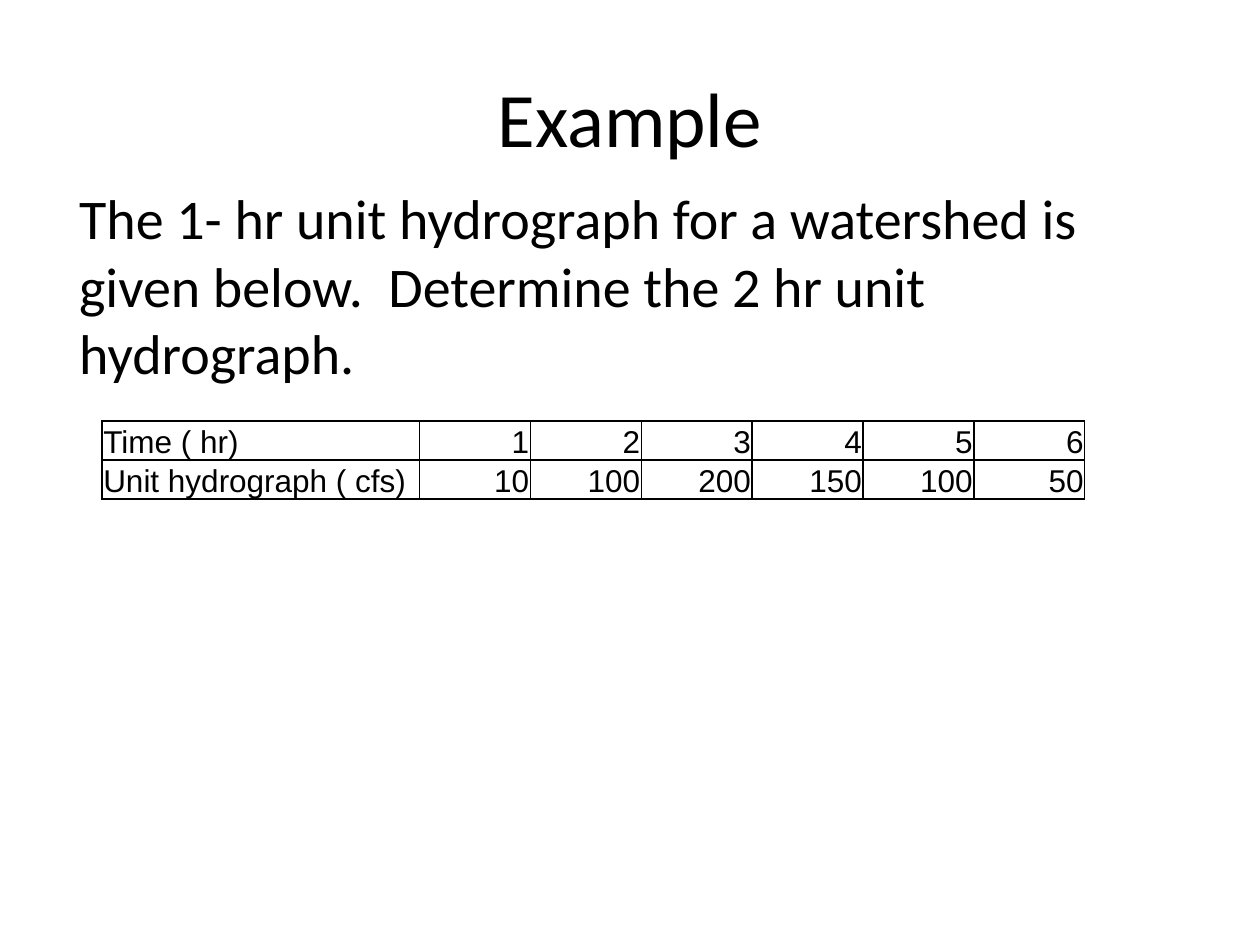
"""Build a slide that poses a unit hydrograph exercise with its data table."""
from dataclasses import dataclass

from lxml import etree
from pptx import Presentation
from pptx.dml.color import RGBColor
from pptx.enum.text import MSO_ANCHOR, PP_ALIGN
from pptx.oxml.ns import qn
from pptx.slide import Slide
from pptx.table import _Cell
from pptx.util import Inches, Pt

BLACK = RGBColor(0, 0, 0)
LEFT, CENTER, RIGHT = PP_ALIGN.LEFT, PP_ALIGN.CENTER, PP_ALIGN.RIGHT
TOP, MIDDLE, BOTTOM = MSO_ANCHOR.TOP, MSO_ANCHOR.MIDDLE, MSO_ANCHOR.BOTTOM
LABEL_WIDTH, VALUE_WIDTH, ROW_HEIGHT = 2.52, 0.88, 0.29


@dataclass
class TextBlock:
    text: str
    left: float
    top: float
    width: float
    height: float
    size: int
    align: PP_ALIGN
    anchor: MSO_ANCHOR


@dataclass
class Series:
    label: str
    values: tuple[int, ...]


BLOCKS = (
    TextBlock("Example", 0.5, 0.3, 9, 1.25, 44, CENTER, MIDDLE),
    TextBlock("The 1- hr unit hydrograph for a watershed is given below.  "
              "Determine the 2 hr unit hydrograph.",
              0.53, 1.41, 9, 4.95, 32, LEFT, TOP),
)
SERIES = (
    Series("Time ( hr)", (1, 2, 3, 4, 5, 6)),
    Series("Unit hydrograph ( cfs)", (10, 100, 200, 150, 100, 50)),
)


def write(p, text: str, font: str, size: int, align: PP_ALIGN) -> None:
    p.alignment = align
    r = p.add_run()
    r.text = text
    r.font.name = font
    r.font.size = Pt(size)
    r.font.color.rgb = BLACK


def add_text(s: Slide, block: TextBlock) -> None:
    sp = s.shapes.add_textbox(Inches(block.left), Inches(block.top),
                              Inches(block.width), Inches(block.height))
    tf = sp.text_frame
    tf.word_wrap = True
    tf.vertical_anchor = block.anchor
    write(tf.paragraphs[0], block.text, "Calibri", block.size, block.align)


def set_borders(cell: _Cell) -> None:
    tcPr = cell._tc.get_or_add_tcPr()
    for side in ("a:lnL", "a:lnR", "a:lnT", "a:lnB"):
        ln = etree.SubElement(tcPr, qn(side), w=str(Pt(1)))
        fill = etree.SubElement(ln, qn("a:solidFill"))
        etree.SubElement(fill, qn("a:srgbClr"), val=str(BLACK))


def fill_cell(cell: _Cell, text: str, align: PP_ALIGN) -> None:
    cell.margin_left = cell.margin_right = cell.margin_top = Inches(0.01)
    cell.margin_bottom = Inches(0)
    cell.vertical_anchor = BOTTOM
    set_borders(cell)
    cell.fill.background()
    write(cell.text_frame.paragraphs[0], text, "Arial", 18, align)


def add_data_table(s: Slide, rows: tuple[Series, ...]) -> None:
    count = len(rows[0].values)
    table = s.shapes.add_table(
        len(rows), count + 1, Inches(0.81), Inches(3.34),
        Inches(LABEL_WIDTH + count * VALUE_WIDTH),
        Inches(len(rows) * ROW_HEIGHT)).table
    table.first_row = table.horz_banding = False
    for i, column in enumerate(table.columns):
        column.width = Inches(VALUE_WIDTH if i else LABEL_WIDTH)
    for i, series in enumerate(rows):
        fill_cell(table.cell(i, 0), series.label, LEFT)
        for j, value in enumerate(series.values, 1):
            fill_cell(table.cell(i, j), str(value), RIGHT)


def main() -> None:
    prs = Presentation()
    prs.slide_width, prs.slide_height = Inches(10), Inches(7.5)
    s = prs.slides.add_slide(prs.slide_layouts[6])
    for block in BLOCKS:
        add_text(s, block)
    add_data_table(s, SERIES)
    prs.save("out.pptx")


if __name__ == "__main__":
    main()
